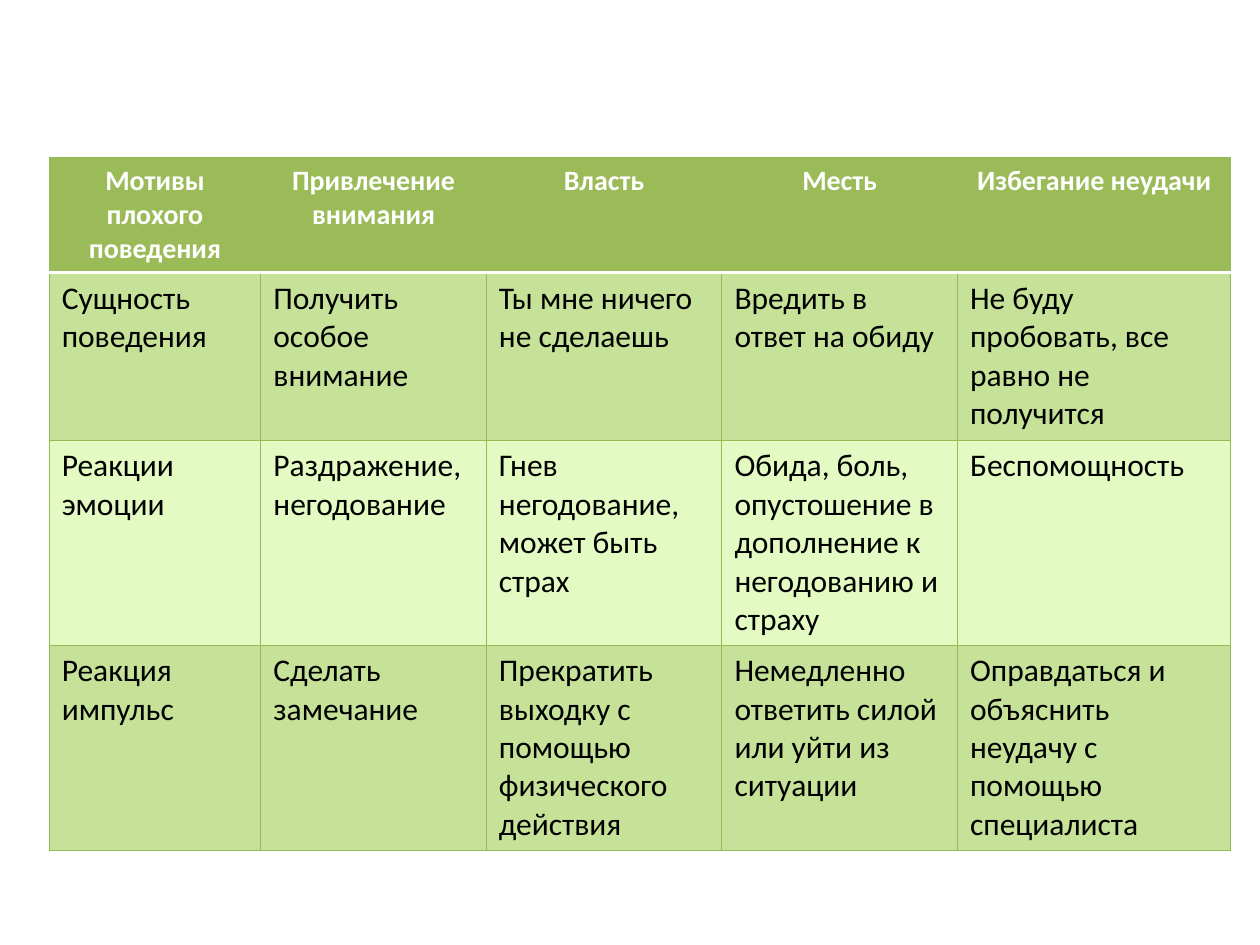
import pptx
import pptx.util
import pptx.dml.color
import pptx.enum.text
import lxml.etree

COLORS = {
    "header": "9BBB59",
    "band": "C6E198",
    "light": "E3FBC2",
    "grid": "98B955",
    "white": "FFFFFF",
    "black": "000000",
}
ROWS = [
    ["Мотивы плохого поведения", "Привлечение внимания", "Власть", "Месть",
     "Избегание неудачи"],
    ["Сущность поведения", "Получить особое внимание", "Ты мне ничего не сделаешь",
     "Вредить в ответ на обиду", "Не буду пробовать, все равно не получится"],
    ["Реакции эмоции", "Раздражение, негодование",
     "Гнев негодование, может быть страх",
     "Обида, боль, опустошение в дополнение к негодованию и страху",
     "Беспомощность"],
    ["Реакция импульс", "Сделать замечание",
     "Прекратить выходку с помощью физического действия",
     "Немедленно ответить силой или уйти из ситуации",
     "Оправдаться и объяснить неудачу с помощью специалиста"],
]
COL_WIDTHS = [1.68, 1.79, 1.87, 1.87, 2.17]
ROW_HEIGHTS = [0.91, 1.33, 1.62, 1.62]
FILLS = ["header", "band", "light", "band"]


def add_border(cell, side, color, width):
    """Draw one side of a cell; sides go in the order L, R, T, B."""
    tc_pr = cell._tc.get_or_add_tcPr()
    ns = "{" + tc_pr.nsmap["a"] + "}"
    ln = lxml.etree.SubElement(tc_pr, ns + "ln" + side, w=str(pptx.util.Pt(width)))
    fill = lxml.etree.SubElement(ln, ns + "solidFill")
    lxml.etree.SubElement(fill, ns + "srgbClr", val=COLORS[color])


# Slide
prs = pptx.Presentation()
prs.slide_width = pptx.util.Inches(10)
prs.slide_height = pptx.util.Inches(7.5)
s = prs.slides.add_slide(prs.slide_layouts[6])

# Table grid
table = s.shapes.add_table(
    len(ROWS), len(COL_WIDTHS),
    pptx.util.Inches(0.39), prs.slide_height // 6,
    pptx.util.Inches(sum(COL_WIDTHS)), pptx.util.Inches(sum(ROW_HEIGHTS))).table
for column, width in zip(table.columns, COL_WIDTHS):
    column.width = pptx.util.Inches(width)
for row, height in zip(table.rows, ROW_HEIGHTS):
    row.height = pptx.util.Inches(height)

# Cells: a bold centred header, then banded rows
for i, texts in enumerate(ROWS):
    header = i == 0
    for j, text in enumerate(texts):
        cell = table.cell(i, j)
        for side in "LRTB":
            under_header = (side == "B" and header) or (side == "T" and i == 1)
            if under_header:
                add_border(cell, side, "white", 2)
            else:
                add_border(cell, side, "grid", 0.75)
        cell.fill.solid()
        cell.fill.fore_color.rgb = pptx.dml.color.RGBColor.from_string(COLORS[FILLS[i]])

        p = cell.text_frame.paragraphs[0]
        if header:
            p.alignment = pptx.enum.text.PP_ALIGN.CENTER
        r = p.add_run()
        r.text = text
        r.font.name = "Calibri"
        r.font.size = pptx.util.Pt(16 if header else 18)
        r.font.bold = header
        r.font.color.rgb = pptx.dml.color.RGBColor.from_string(
            COLORS["white" if header else "black"])

prs.save("out.pptx")
